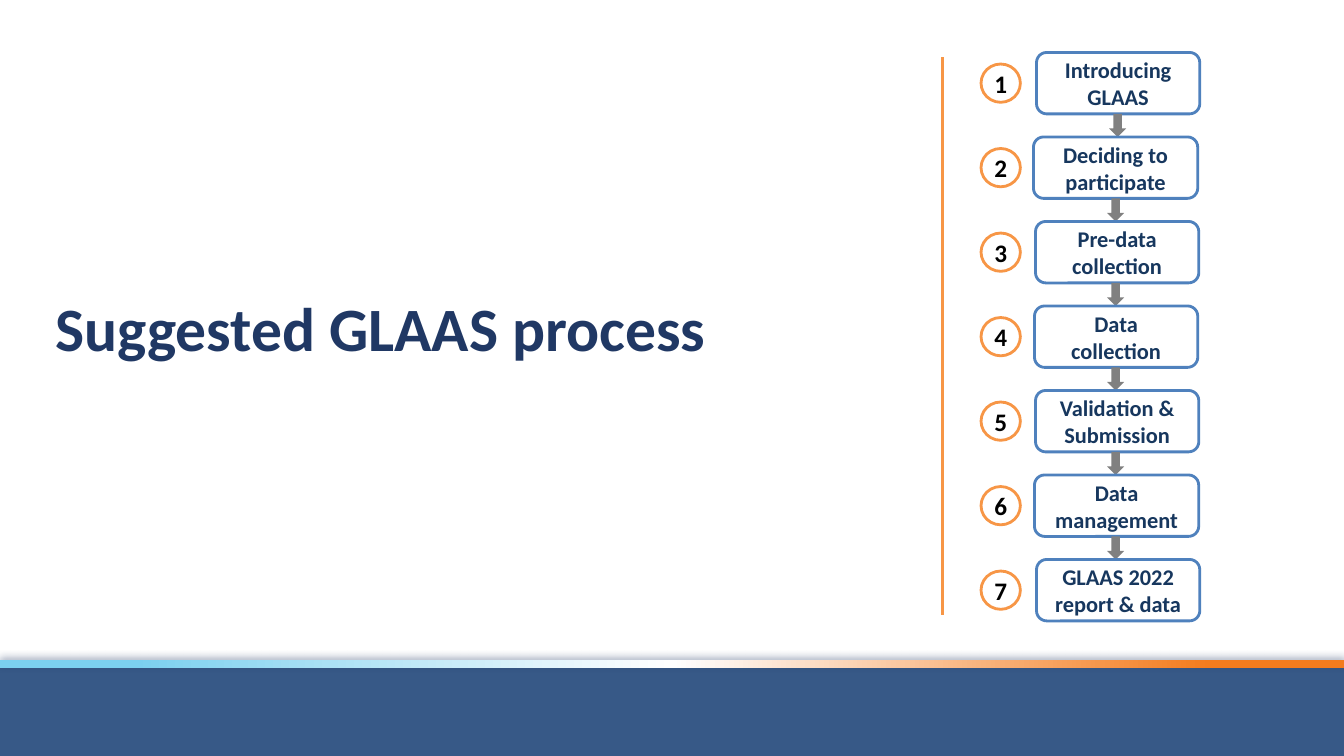
from lxml import etree
from pptx import Presentation
from pptx.dml.color import RGBColor
from pptx.enum import shapes, text
from pptx.oxml import ns, parse_xml
from pptx.util import Inches, Pt

TITLE = "Suggested GLAAS process"
# label, left edge of box, width of box
STEPS = [
    ("Introducing GLAAS", 10.28, 1.62),
    ("Deciding to participate", 10.25, 1.63),
    ("Pre-data collection", 10.27, 1.62),
    ("Data collection", 10.26, 1.62),
    ("Validation & Submission", 10.27, 1.62),
    ("Data management", 10.26, 1.63),
    ("GLAAS 2022 report & data", 10.28, 1.62),
]
BAND_STOPS = [(10, "7BD0EF"), (50, "FFFFFF"), (90, "F37C1E")]

WHITE = RGBColor(0xFF, 0xFF, 0xFF)
BLACK = RGBColor(0, 0, 0)
NAVY = RGBColor(0x20, 0x38, 0x64)
LABEL_BLUE = RGBColor(0x17, 0x37, 0x5E)
BOX_BLUE = RGBColor(0x4F, 0x81, 0xBD)
FOOTER_BLUE = RGBColor(0x37, 0x59, 0x87)
ORANGE = RGBColor(0xF7, 0x96, 0x46)
GREY = RGBColor(0x80, 0x80, 0x80)

TOP, BOX_H = 0.52, 0.61
PITCH = (5.55 - TOP) / (len(STEPS) - 1)
CIRCLE_X, CIRCLE_W, CIRCLE_H = 9.73, 0.39, 0.38
ARROW_X, ARROW_W, ARROW_H = 10.98, 0.17, 0.23
MSO = shapes.MSO_SHAPE

prs = Presentation()
prs.slide_width, prs.slide_height = Inches(13.33), Inches(7.5)
s = prs.slides.add_slide(prs.slide_layouts[5])


def add_shape(kind, x, y, w, h, fill, line=None):
    sp = s.shapes.add_shape(kind, *map(Inches, (x, y, w, h)))
    sp.shadow.inherit = False
    sp.fill.solid()
    sp.fill.fore_color.rgb = fill
    if line is None:
        sp.line.fill.background()
    else:
        sp.line.color.rgb = line
        sp.line.width = Pt(2)
    return sp


def write(sp, words, size, color, align, margin=None):
    tf = sp.text_frame
    tf.word_wrap = True
    tf.vertical_anchor = text.MSO_ANCHOR.MIDDLE
    if margin is not None:
        for side in ("left", "right", "top", "bottom"):
            setattr(tf, "margin_" + side, margin)
    p = tf.paragraphs[0]
    p.alignment = align
    r = p.add_run()
    r.text = words
    for name, value in {"name": "Calibri", "size": Pt(size), "bold": True}.items():
        setattr(r.font, name, value)
    r.font.color.rgb = color
    return p


def style_band(sp):
    """Give the band its three-colour gradient and the shadow above it."""
    stops = "".join(
        f'<a:gs pos="{pos * 1000}"><a:srgbClr val="{color}"/></a:gs>'
        for pos, color in BAND_STOPS)
    props = sp.fill._xPr
    props.replace(props.find(ns.qn("a:solidFill")), parse_xml(
        f'<a:gradFill {ns.nsdecls("a")} rotWithShape="1"><a:gsLst>{stops}</a:gsLst>'
        '<a:lin ang="0" scaled="0"/></a:gradFill>'))
    props.find(ns.qn("a:effectLst")).append(parse_xml(
        f'<a:outerShdw {ns.nsdecls("a")} blurRad="{Pt(5)}" dist="{Pt(2)}" '
        f'dir="{270 * 60000}" algn="b" rotWithShape="0"><a:srgbClr val="{NAVY}">'
        '<a:alpha val="40000"/></a:srgbClr></a:outerShdw>'))


add_shape(MSO.RECTANGLE, 0, 6.62, 13.33, 0.88, FOOTER_BLUE)
style_band(add_shape(MSO.RECTANGLE, 0, 6.55, 13.33, 0.08, WHITE))

title = s.shapes.title
for name, value in {"left": 0.45, "top": 2.83, "width": 7.22, "height": 0.92}.items():
    setattr(title, name, Inches(value))
title.text_frame.auto_size = text.MSO_AUTO_SIZE.NONE
write(title, TITLE, 44, NAVY, text.PP_ALIGN.LEFT).line_spacing = 0.9

for i, (label, x, w) in enumerate(STEPS):
    y = TOP + i * PITCH
    box = add_shape(MSO.ROUNDED_RECTANGLE, x, y, w, BOX_H, WHITE, BOX_BLUE)
    write(box, label, 16, LABEL_BLUE, text.PP_ALIGN.CENTER)
    circle = add_shape(MSO.OVAL, CIRCLE_X, y + (BOX_H - CIRCLE_H) / 2,
                       CIRCLE_W, CIRCLE_H, WHITE, ORANGE)
    write(circle, str(i + 1), 18, BLACK, text.PP_ALIGN.CENTER, 0)
    if i < len(STEPS) - 1:
        nudge = 0.02 if i == 0 else 0
        add_shape(MSO.DOWN_ARROW, ARROW_X + nudge, y + BOX_H, ARROW_W, ARROW_H, GREY)

divider = s.shapes.add_connector(shapes.MSO_CONNECTOR.STRAIGHT,
                                 *map(Inches, (9.35, 0.57, 9.35, 6.1)))
divider.line.color.rgb = ORANGE
divider.line.width = Pt(2.25)
etree.SubElement(divider._element.spPr, ns.qn("a:effectLst"))

prs.save("out.pptx")
